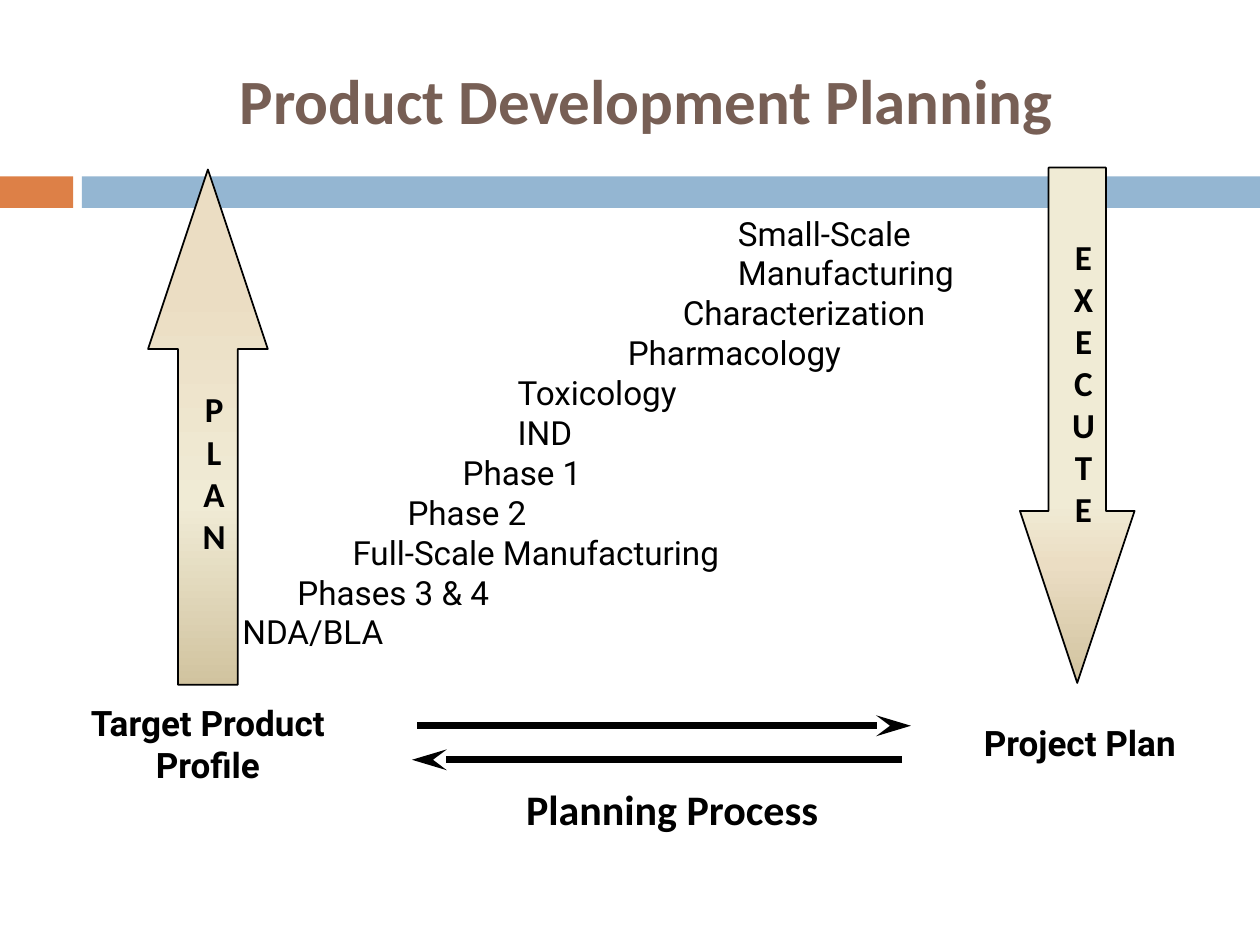
"""Build the product development planning slide on a 100 by 75 grid."""
import copy
import pptx
import pptx.util
import pptx.dml.color
import pptx.enum.shapes
import pptx.enum.text
import pptx.oxml
import pptx.oxml.ns

HUES = {"ink": "000000", "title": "775F55", "rust": "DD8047", "blue": "94B6D2",
        "sand": "EBDDC3", "cream": "F0EBD5", "tan": "D1C39F"}
KINDS = pptx.enum.shapes.MSO_SHAPE
ALIGN = pptx.enum.text.PP_ALIGN
MID = pptx.enum.text.MSO_ANCHOR.MIDDLE
TOP = pptx.enum.text.MSO_ANCHOR.TOP
qn = pptx.oxml.ns.qn

deck = pptx.Presentation()
deck.slide_width = pptx.util.Inches(10)
deck.slide_height = pptx.util.Inches(7.5)
slide = deck.slides.add_slide(deck.slide_layouts[6])
shapes = slide.shapes
col = deck.slide_width / 100
row = deck.slide_height / 75


def grid(x, y, wide, high):
    return [round(n) for n in (x * col, y * row, wide * col, high * row)]


def write(shape, lines, font, size, hue="ink", bold=True,
          align=ALIGN.CENTER, wrap=True, anchor=TOP):
    frame = shape.text_frame
    frame.word_wrap = wrap
    frame.vertical_anchor = anchor
    frame.text = "\n".join(lines)
    for para in frame.paragraphs:
        para.alignment = align
        para.font.name = font
        para.font.size = pptx.util.Pt(size)
        para.font.bold = bold
        para.font.color.rgb = pptx.dml.color.RGBColor.from_string(HUES[hue])
    return frame


for x, wide, hue in [(0, 5.8, "rust"), (6.5, 93.5, "blue")]:
    band = shapes.add_shape(KINDS.RECTANGLE, *grid(x, 14, wide, 2.5))
    band.shadow.inherit = False
    band.fill.solid()
    band.fill.fore_color.rgb = pptx.dml.color.RGBColor.from_string(HUES[hue])
    band.line.fill.background()

arrows = [
    (KINDS.UP_ARROW, (11.75, 13.45, 9.5, 40.9), "PLAN",
     [(0.23, "sand"), (0.65, "cream"), (1, "tan")]),
    (KINDS.DOWN_ARROW, (80.95, 13.3, 9.1, 40.9), "EXECUTE",
     [(0.65, "cream"), (0.77, "sand"), (1, "tan")]),
]
for kind, place, word, stops in arrows:
    arrow = shapes.add_shape(kind, *grid(*place))
    arrow.shadow.inherit = False
    arrow.adjustments[0] = 0.5
    arrow.adjustments[1] = 1.5
    arrow.fill.gradient()
    arrow.fill.gradient_angle = 270
    ramp = arrow._element.spPr.find(".//" + qn("a:gsLst"))
    ramp.append(copy.deepcopy(ramp[-1]))
    for stop, (share, hue) in zip(arrow.fill.gradient_stops, stops):
        stop.position = share
        stop.color.rgb = pptx.dml.color.RGBColor.from_string(HUES[hue])
    arrow.line.color.rgb = pptx.dml.color.RGBColor.from_string(HUES["ink"])
    arrow.line.width = pptx.util.Pt(1)
    frame = write(arrow, [word], "Calibri", 20, wrap=False, anchor=MID)
    frame.margin_right = 0
    frame._txBody.bodyPr.set("vert", "wordArtVert")

steps = [("Small-Scale", 9), ("Manufacturing", 9), ("Characterization", 8),
         ("Pharmacology", 7), ("Toxicology", 5), ("IND", 5), ("Phase 1", 4),
         ("Phase 2", 3), ("Full-Scale Manufacturing", 2),
         ("Phases 3 & 4", 1), ("NDA/BLA", 0)]
stairs = shapes.add_textbox(*grid(18.25, 16.4, 68.1, 36.5))
frame = write(stairs, [name for name, step in steps], "Roboto", 19,
              bold=False, align=ALIGN.LEFT)
for para, (name, step) in zip(frame.paragraphs, steps):
    para._p.get_or_add_pPr().set("marL", str(round(step * 4.37 * col)))

for start, end, y in [(33.1, 72.3, 57.6), (71.6, 32.7, 60.3)]:
    x, y, stop, y = grid(start, y, end, y)
    line = shapes.add_connector(pptx.enum.shapes.MSO_CONNECTOR.STRAIGHT,
                                x, y, stop, y)
    line.line.color.rgb = pptx.dml.color.RGBColor.from_string(HUES["ink"])
    line.line.width = pptx.util.Pt(4)
    head = pptx.oxml.ns.nsdecls("a")
    line.line._get_or_add_ln().append(pptx.oxml.parse_xml(
        f'<a:tailEnd {head} type="stealth" w="med" len="lg"/>'))
    line._element.spPr.append(pptx.oxml.parse_xml(f"<a:effectLst {head}/>"))

labels = [
    ("Project Plan", (77.1, 56.8, 19.1, 4.4), "Roboto", 20, "ink", ALIGN.LEFT, TOP),
    ("Target Product Profile", (5.95, 55.15, 21.1, 11.1), "Roboto", 20, "ink", ALIGN.CENTER, TOP),
    ("Product Development Planning", (6.7, 2.5, 89.2, 10.8), "Calibri", 36, "title", ALIGN.CENTER, MID),
    ("Planning Process", (35, 61.7, 36.7, 5), "Calibri", 24, "ink", ALIGN.CENTER, TOP),
]
for text, place, font, size, hue, align, anchor in labels:
    box = shapes.add_textbox(*grid(*place))
    write(box, [text], font, size, hue, align=align, anchor=anchor)

deck.save("out.pptx")
